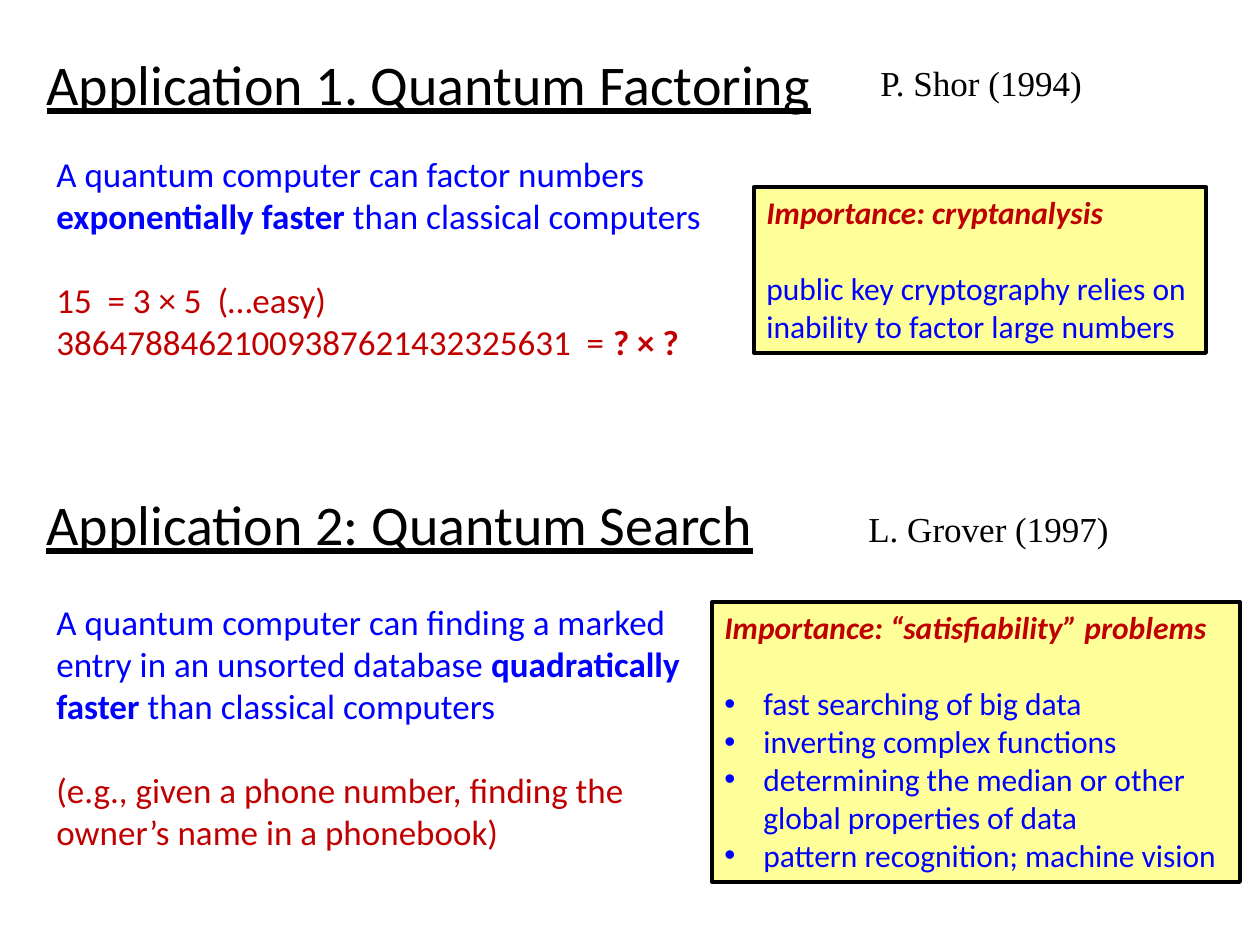
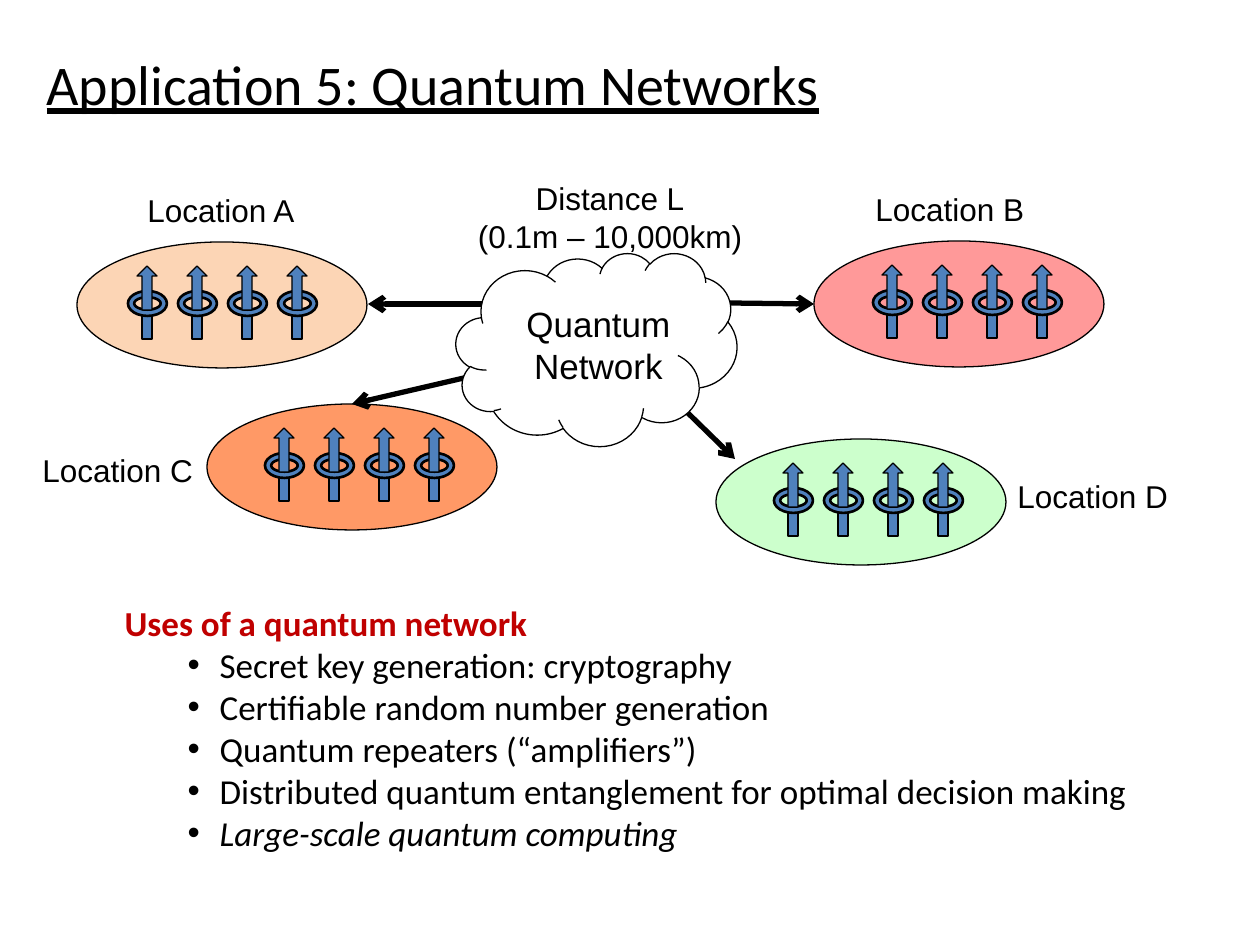
import dataclasses

import lxml.etree
import pptx
import pptx.dml.color
import pptx.enum.shapes
import pptx.enum.text
import pptx.oxml.ns
import pptx.util

SCALE = 914400 / 126
BLACK, BLUE, RED = "000000", "0000FF", "C00000"
WHITE, STEEL, CREAM = "FFFFFF", "4F81BD", "FFFF99"
SANS, PLAIN, SERIF = "Calibri", "Arial", "Times New Roman"
KINDS = pptx.enum.shapes.MSO_SHAPE
LEFT = pptx.enum.text.PP_ALIGN.LEFT
CENTER = pptx.enum.text.PP_ALIGN.CENTER


@dataclasses.dataclass
class Row:
    """One paragraph: (text, style letters) pairs and their layout."""
    texts: list
    tint: str = BLACK
    gap: float = 0
    left: int = 0
    hang: int = 0
    level: int = 0
    align: int = LEFT


def px(*sizes):
    """Turn pixel lengths into EMU."""
    return [pptx.util.Emu(round(size * SCALE)) for size in sizes]


def color(code):
    """Turn a hex string into a colour."""
    return pptx.dml.color.RGBColor.from_string(code)


def add_tag(parent, name, **values):
    """Append a drawing element with attributes."""
    tag = lxml.etree.SubElement(parent, pptx.oxml.ns.qn("a:" + name))
    for key, value in values.items():
        tag.set(key, value)


def set_marks(para, row):
    """Set the indent and the bullet of a paragraph."""
    props = para._p.get_or_add_pPr()
    left, hang = px(row.left, row.hang)
    props.set("marL", str(left))
    props.set("indent", str(-hang))
    if row.hang:
        add_tag(props, "buFont", typeface=PLAIN)
        add_tag(props, "buChar", char="•")
    else:
        add_tag(props, "buNone")


def write(frame, rows, size, face, wrap=True):
    """Fill a text frame with rows in one font and size."""
    frame.word_wrap = wrap
    frame.auto_size = pptx.enum.text.MSO_AUTO_SIZE.NONE
    frame.vertical_anchor = pptx.enum.text.MSO_ANCHOR.TOP
    for index, row in enumerate(rows):
        para = frame.add_paragraph() if index else frame.paragraphs[0]
        set_marks(para, row)
        para.level = row.level
        para.alignment = row.align
        para.space_before = pptx.util.Pt(row.gap)
        for text, style in row.texts:
            run = para.add_run()
            run.text = text
            font = run.font
            font.size, font.name = pptx.util.Pt(size), face
            font.color.rgb = color(row.tint)
            font.bold, font.italic = "b" in style, "i" in style
            font.underline = "u" in style


def place(shape, box):
    """Move a shape to a box in pixels."""
    shape.left, shape.top, shape.width, shape.height = px(*box)


def add_text(slide, box, rows, size, face, wrap=True):
    """Add a text box."""
    shape = slide.shapes.add_textbox(*px(*box))
    write(shape.text_frame, rows, size, face, wrap)


def add_form(shapes, kind, box, fill, width):
    """Add a filled preset shape with a black outline."""
    shape = shapes.add_shape(kind, *px(*box))
    shape.shadow.inherit = False
    shape.fill.solid()
    shape.fill.fore_color.rgb = color(fill)
    shape.line.color.rgb = color(BLACK)
    shape.line.width = pptx.util.Pt(width)
    return shape


def title_rows(text):
    """Give the shared title style."""
    return [Row([(text, "u")])]


def set_title(slide, box, text):
    """Move and fill the title placeholder."""
    place(slide.shapes.title, box)
    write(slide.shapes.title.text_frame, title_rows(text), 32, SANS)


def add_card(slide, box, head, rows):
    """Add a yellow card that tells why a topic matters."""
    card = add_form(slide.shapes, KINDS.RECTANGLE, box, CREAM, 2.25)
    write(card.text_frame, [Row([(head, "bi")], RED)] + rows, 18, SANS)


def add_spin(shapes, left, top):
    """Add one spin: a stem, a ring and an arrow."""
    forms = [(KINDS.RECTANGLE, 14, 45, 10, 28, 0.75),
             (KINDS.DONUT, 0, 25, 39, 25, 1.5),
             (KINDS.UP_ARROW, 9, 0, 20, 44, 0.75)]
    for kind, x, y, wide, high, line in forms:
        add_form(shapes, kind, (left + x, top + y, wide, high), STEEL, line)


def add_node(slide, left, top, fill, inset):
    """Add a location: an oval that holds four spins."""
    shapes = slide.shapes.add_group_shape().shapes
    add_form(shapes, KINDS.OVAL, (left, top, 290, 126), fill, 0.75)
    for index in range(4):
        add_spin(shapes, left + inset + 50 * index, top + 24)


def add_arrow(slide, start, end):
    """Add a thick line with an open arrowhead at its end."""
    kind = pptx.enum.shapes.MSO_CONNECTOR.STRAIGHT
    line = slide.shapes.add_connector(kind, *px(*start, *end))
    line.line.color.rgb = color(BLACK)
    line.line.width = pptx.util.Pt(3)
    props = line._element.spPr
    add_tag(props.find(pptx.oxml.ns.qn("a:ln")), "tailEnd", type="arrow")
    add_tag(props, "effectLst")


def add_cloud(slide, left, top):
    """Add the network cloud and its name."""
    add_form(slide.shapes, KINDS.CLOUD, (left, top, 281, 193), WHITE, 0.75)
    rows = [Row([(word, "")], align=CENTER) for word in ("Quantum", "Network")]
    add_text(slide, (left + 48, top + 43, 189, 97), rows, 20, PLAIN)


def add_net(slide, left, top):
    """Add the network of four locations around the cloud."""
    nodes = [("A", 34, 69, "FCD5B5", 51, 92, 12),
             ("B", 771, 68, "FF9999", 59, 820, 11),
             ("C", 164, 231, "FF9966", 58, -13, 272),
             ("D", 673, 266, "CCFFCC", 58, 962, 298)]
    for name, x, y, fill, inset, text_x, text_y in nodes:
        add_node(slide, left + x, top + y, fill, inset)
        box = (left + text_x, top + text_y, 177, 50)
        add_text(slide, box, [Row([("Location " + name, "")])], 18, PLAIN)
    lines = [(524, 131, 325, 131), (600, 129, 771, 131),
             (554, 174, 309, 231), (608, 204, 692, 286)]
    for x1, y1, x2, y2 in lines:
        add_arrow(slide, (left + x1, top + y1), (left + x2, top + y2))
    add_cloud(slide, left + 413, top + 80)
    rows = [Row([(text, "")], align=CENTER)
            for text in ("Distance L", "(0.1m – 10,000km)")]
    add_text(slide, (left + 421, top, 292, 89), rows, 18, PLAIN, False)


def add_shor(slide, left, top):
    """Add the text and card on factoring."""
    set_title(slide, (left, top, 896, 80), "Application 1. Quantum Factoring")
    add_text(slide, (left + 10, top + 103, 1097, 224), [
        Row([("A quantum computer can factor numbers", "")], BLUE),
        Row([("exponentially faster", "b"),
             (" than classical computers", "")], BLUE),
        Row([("15  = 3 × 5  (…easy)", "")], RED, 24.4),
        Row([("38647884621009387621432325631  = ", ""),
             ("? × ?", "b")], RED)], 20, SANS)
    add_text(slide, (left + 834, top + 12, 228, 55),
             [Row([("P. Shor (1994)", "")])], 20, SERIF)
    add_card(slide, (left + 720, top + 144, 452, 166),
             "Importance: cryptanalysis",
             [Row([("public key cryptography relies on inability to factor "
                    "large numbers", "")], BLUE, 22)])


def add_grover(slide, left, top):
    """Add the text and card on search."""
    add_text(slide, (left, top, 790, 80),
             title_rows("Application 2: Quantum Search"), 32, SANS)
    add_text(slide, (left + 822, top + 18, 305, 55),
             [Row([("L. Grover (1997)", "")])], 20, SERIF)
    add_text(slide, (left + 10, top + 111, 655, 267), [
        Row([("A quantum computer can finding a marked entry in an unsorted "
              "database ", ""), ("quadratically faster ", "b"),
             ("than classical computers", "")], BLUE),
        Row([("(e.g., given a phone number, finding the owner’s name in a "
              "phonebook)", "")], RED, 24.4)], 20, SANS)
    items = ["fast searching of big data", "inverting complex functions",
             "determining the median or other global properties of data",
             "pattern recognition; machine vision"]
    rows = [Row([(text, "")], BLUE, 0 if index else 22, 39, 39)
            for index, text in enumerate(items)]
    add_card(slide, (left + 678, top + 119, 528, 280),
             "Importance: “satisfiability” problems", rows)


def add_uses(slide, box):
    """Fill the body placeholder with the uses of a network."""
    items = [("Secret key generation: cryptography", ""),
             ("Certifiable random number generation", ""),
             ("Quantum repeaters (“amplifiers”)", ""),
             ("Distributed quantum entanglement for optimal decision making",
              ""),
             ("Large-scale quantum computing", "i")]
    rows = [Row([("Uses of a quantum network", "b")], RED, left=63, level=1)]
    rows += [Row([item], left=158, hang=32, level=2) for item in items]
    body = slide.placeholders[1]
    place(body, box)
    write(body.text_frame, rows, 20, SANS)


def main():
    """Build both slides and save the deck."""
    deck = pptx.Presentation()
    deck.slide_width, deck.slide_height = px(1260, 945)
    slide = deck.slides.add_slide(deck.slide_layouts[5])
    add_shor(slide, 34, 43)
    add_grover(slide, 34, 483)
    slide = deck.slides.add_slide(deck.slide_layouts[1])
    set_title(slide, (34, 43, 1163, 80), "Application 5: Quantum Networks")
    add_net(slide, 43, 173)
    add_uses(slide, (49, 595, 1125, 268))
    deck.save("out.pptx")


if __name__ == "__main__":
    main()
